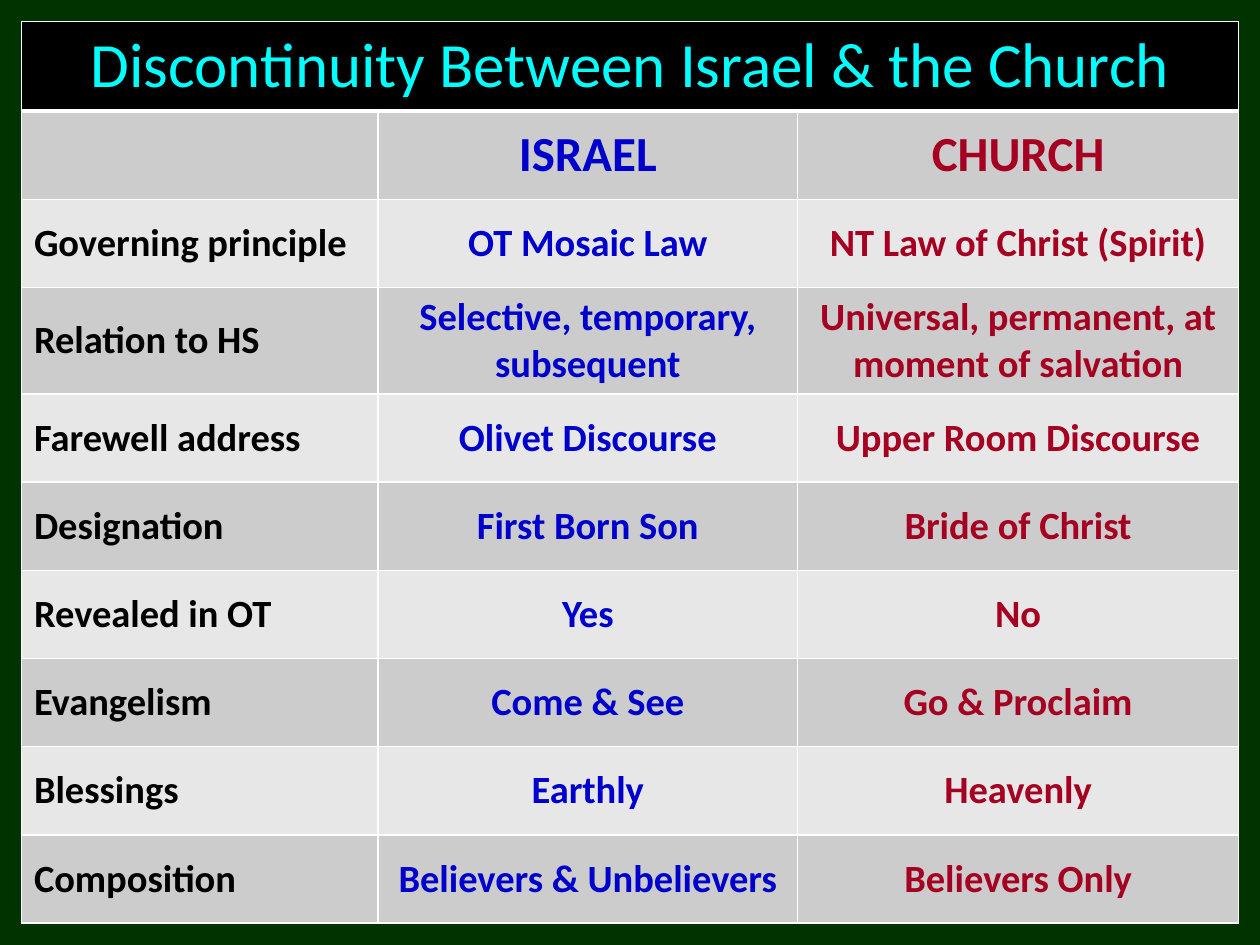
from dataclasses import dataclass

from lxml.etree import SubElement
from pptx import Presentation
from pptx.dml.color import RGBColor as Rgb
from pptx.enum.text import MSO_ANCHOR as Anchor, PP_ALIGN as Align
from pptx.oxml.ns import qn
from pptx.util import Inches, Pt


@dataclass(frozen=True)
class Theme:
    font: str = "Calibri"
    backdrop: str = "003300"
    banner: str = "000000"
    banner_text: str = "00FFFF"
    bands: tuple = ("CCCCCC", "E7E7E7")
    columns: tuple = ("000000", "0000CC", "A50021")
    border: str = "FFFFFF"
    title_size: int = 36
    head_size: int = 28
    body_size: int = 22


THEME = Theme()
TITLE = "Discontinuity Between Israel & the Church"
COLUMN_WIDTHS = (2.83, 3.33, 3.5)
ROW_HEIGHT = 0.7
COMPARISON = [
    ("", "ISRAEL", "CHURCH"),
    ("Governing principle", "OT Mosaic Law", "NT Law of Christ (Spirit)"),
    ("Relation to HS", "Selective, temporary, subsequent",
     "Universal, permanent, at moment of salvation"),
    ("Farewell address", "Olivet Discourse", "Upper Room Discourse"),
    ("Designation", "First Born Son", "Bride of Christ"),
    ("Revealed in OT", "Yes", "No"),
    ("Evangelism", "Come & See", "Go & Proclaim"),
    ("Blessings", "Earthly", "Heavenly"),
    ("Composition", "Believers & Unbelievers", "Believers Only"),
]


def set_borders(cell, bottom=1):
    """Draw the four cell borders; they must precede the fill in the XML."""
    properties = cell._tc.get_or_add_tcPr()
    widths = {"lnL": 1, "lnR": 1, "lnT": 1, "lnB": bottom}
    for index, (side, width) in enumerate(widths.items()):
        line = SubElement(properties, qn(f"a:{side}"), w=str(Pt(width)))
        fill = SubElement(line, qn("a:solidFill"))
        SubElement(fill, qn("a:srgbClr"), val=THEME.border)
        properties.insert(index, line)


def fill_cell(cell, text, fill, color, size, bold=True, align=Align.CENTER, bottom=1):
    cell.fill.solid()
    cell.fill.fore_color.rgb = Rgb.from_string(fill)
    cell.vertical_anchor = Anchor.MIDDLE
    set_borders(cell, bottom)

    para = cell.text_frame.paragraphs[0]
    para.alignment = align
    if text:
        span = para.add_run()
        span.text = text
        span.font.color.rgb = Rgb.from_string(color)
    font = span.font if text else para.font
    for name, value in {"name": THEME.font, "size": Pt(size), "bold": bold}.items():
        setattr(font, name, value)


def add_banner(table):
    """Merge the first row into one title cell."""
    last = len(COLUMN_WIDTHS) - 1
    table.cell(0, 0).merge(table.cell(0, last))
    fill_cell(table.cell(0, 0), TITLE, THEME.banner, THEME.banner_text,
              THEME.title_size, bold=False, bottom=3)
    for column in range(1, last + 1):
        set_borders(table.cell(0, column), bottom=3)


def add_comparison(page, left, top):
    row_count = len(COMPARISON) + 1
    frame = page.shapes.add_table(
        row_count, len(COLUMN_WIDTHS), left, top,
        Inches(sum(COLUMN_WIDTHS)), Inches(ROW_HEIGHT * row_count))
    table = frame.table
    table.first_row = table.horz_banding = False
    for column, width in zip(table.columns, COLUMN_WIDTHS):
        column.width = Inches(width)
    for row in table.rows:
        row.height = Inches(ROW_HEIGHT)

    add_banner(table)

    # Banded rows, one text colour per column
    for index, row in enumerate(COMPARISON):
        size = THEME.body_size if index else THEME.head_size
        for column, text in enumerate(row):
            fill_cell(table.cell(index + 1, column), text, THEME.bands[index % 2],
                      THEME.columns[column], size,
                      align=Align.CENTER if column else Align.LEFT)


def main():
    deck = Presentation()
    deck.slide_width, deck.slide_height = Inches(10), Inches(7.5)
    page = deck.slides.add_slide(deck.slide_layouts[6])
    page.background.fill.solid()
    page.background.fill.fore_color.rgb = Rgb.from_string(THEME.backdrop)
    add_comparison(page, Inches(0.17), Inches(0.17))
    deck.save("out.pptx")


if __name__ == "__main__":
    main()
